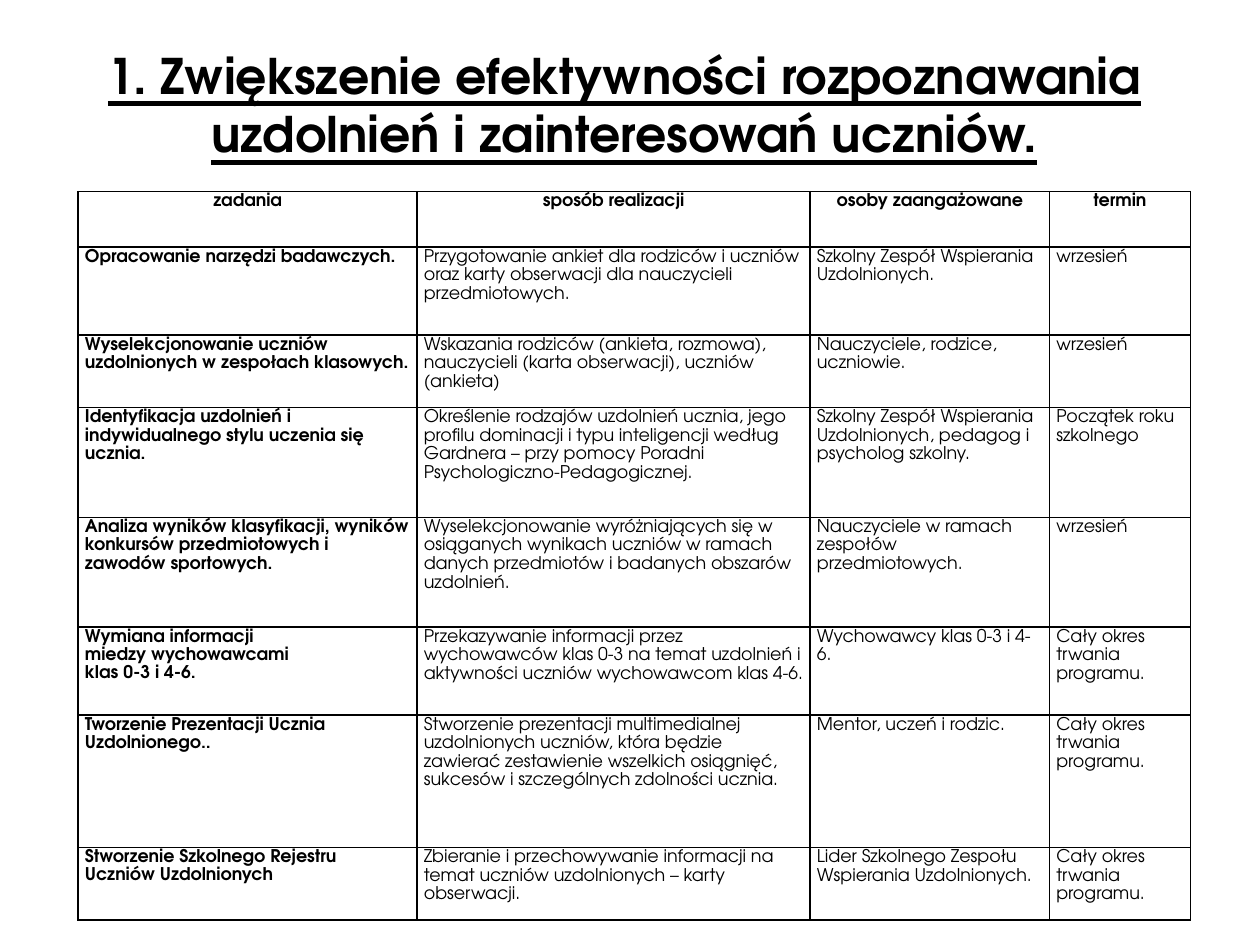
import lxml.etree
import pptx
import pptx.dml.color
import pptx.enum.text
import pptx.oxml.ns
import pptx.util

COLORS = {"text": "000000", "border": "000000", "background": "FFFFFF"}
FONT = "TeX Gyre Adventor"
CENTER = pptx.enum.text.PP_ALIGN.CENTER
LEFT = pptx.enum.text.PP_ALIGN.LEFT

COLUMN_WIDTHS = [2.69, 3.12, 1.9, 1.12]
ROW_HEIGHTS = [0.44, 0.7, 0.52, 0.87, 0.87, 0.7, 1.05, 0.52]
TASKS = [
    ("zadania", "sposób realizacji", "osoby zaangażowane", "termin"),
    ("Opracowanie narzędzi badawczych.",
     "Przygotowanie ankiet dla rodziców i uczniów oraz karty obserwacji dla nauczycieli przedmiotowych.",
     "Szkolny Zespół Wspierania Uzdolnionych.", "wrzesień"),
    ("Wyselekcjonowanie uczniów uzdolnionych w zespołach klasowych.",
     "Wskazania rodziców (ankieta, rozmowa), nauczycieli (karta obserwacji), uczniów (ankieta)",
     "Nauczyciele, rodzice, uczniowie.", "wrzesień"),
    ("Identyfikacja uzdolnień i indywidualnego stylu uczenia się ucznia.",
     "Określenie rodzajów uzdolnień ucznia, jego profilu dominacji i typu inteligencji według "
     "Gardnera – przy pomocy Poradni Psychologiczno-Pedagogicznej.",
     "Szkolny Zespół Wspierania Uzdolnionych, pedagog i psycholog szkolny.",
     "Początek roku szkolnego"),
    ("Analiza wyników klasyfikacji, wyników konkursów przedmiotowych i zawodów sportowych.",
     "Wyselekcjonowanie wyróżniających się w osiąganych wynikach uczniów w ramach danych "
     "przedmiotów i badanych obszarów uzdolnień.",
     "Nauczyciele w ramach zespołów przedmiotowych.", "wrzesień"),
    ("Wymiana informacji\nmiedzy wychowawcami\nklas 0-3 i 4-6.",
     "Przekazywanie informacji przez wychowawców klas 0-3 na temat uzdolnień i aktywności "
     "uczniów wychowawcom klas 4-6.",
     "Wychowawcy klas 0-3 i 4-6.", "Cały okres trwania programu."),
    ("Tworzenie Prezentacji Ucznia Uzdolnionego..",
     "Stworzenie prezentacji multimedialnej uzdolnionych uczniów, która będzie zawierać "
     "zestawienie wszelkich osiągnięć, sukcesów i szczególnych zdolności ucznia.",
     "Mentor, uczeń i rodzic.", "Cały okres trwania programu."),
    ("Stworzenie Szkolnego Rejestru Uczniów Uzdolnionych",
     "Zbieranie i przechowywanie informacji na temat uczniów uzdolnionych – karty obserwacji.",
     "Lider Szkolnego Zespołu Wspierania Uzdolnionych.", "Cały okres trwania programu."),
]


def write_text(text_frame, text, alignment, line_spacing, **font_format):
    text_frame.text = text
    for paragraph in text_frame.paragraphs:
        paragraph.alignment = alignment
        paragraph.line_spacing = line_spacing
        for run in paragraph.runs:
            run.font.color.rgb = pptx.dml.color.RGBColor.from_string(COLORS["text"])
            for name, value in {"name": FONT, **font_format}.items():
                setattr(run.font, name, value)


def add_borders(cell):
    """Draw a one-point line on all four sides of the cell."""
    qn = pptx.oxml.ns.qn
    properties = cell._tc.get_or_add_tcPr()
    for position, side in enumerate(("lnL", "lnR", "lnT", "lnB")):
        line = lxml.etree.Element(qn(f"a:{side}"), w=str(pptx.util.Pt(1)))
        fill = lxml.etree.SubElement(line, qn("a:solidFill"))
        lxml.etree.SubElement(fill, qn("a:srgbClr"), val=COLORS["border"])
        properties.insert(position, line)


presentation = pptx.Presentation()
presentation.slide_width = pptx.util.Inches(10)
presentation.slide_height = pptx.util.Inches(7.5)
slide = presentation.slides.add_slide(presentation.slide_layouts[6])
slide.background.fill.solid()
slide.background.fill.fore_color.rgb = pptx.dml.color.RGBColor.from_string(COLORS["background"])

title = slide.shapes.add_textbox(*map(pptx.util.Inches, (0.23, 0, 9.45, 1.65)))
title.text_frame.word_wrap = True
title.text_frame.vertical_anchor = pptx.enum.text.MSO_ANCHOR.MIDDLE
write_text(title.text_frame,
           "1. Zwiększenie efektywności rozpoznawania uzdolnień i zainteresowań uczniów.",
           CENTER, 1.0, size=pptx.util.Pt(28), bold=True, underline=True)

table = slide.shapes.add_table(
    len(ROW_HEIGHTS), len(COLUMN_WIDTHS),
    *map(pptx.util.Inches, (0.62, 1.52, sum(COLUMN_WIDTHS), sum(ROW_HEIGHTS))),
).table
for column, width in zip(table.columns, COLUMN_WIDTHS):
    column.width = pptx.util.Inches(width)
for row, height in zip(table.rows, ROW_HEIGHTS):
    row.height = pptx.util.Inches(height)

cell_format = {
    "margin_left": pptx.util.Pt(3.9),
    "margin_right": pptx.util.Pt(3.9),
    "margin_top": 0,
    "margin_bottom": 0,
}
for row_index, task in enumerate(TASKS):
    for column_index, text in enumerate(task):
        cell = table.cell(row_index, column_index)
        for name, value in cell_format.items():
            setattr(cell, name, value)
        cell.fill.background()
        add_borders(cell)
        is_header = row_index == 0
        write_text(cell.text_frame, text, CENTER if is_header else LEFT, 1.15,
                   size=pptx.util.Pt(10), bold=is_header or column_index == 0)

presentation.save("out.pptx")
